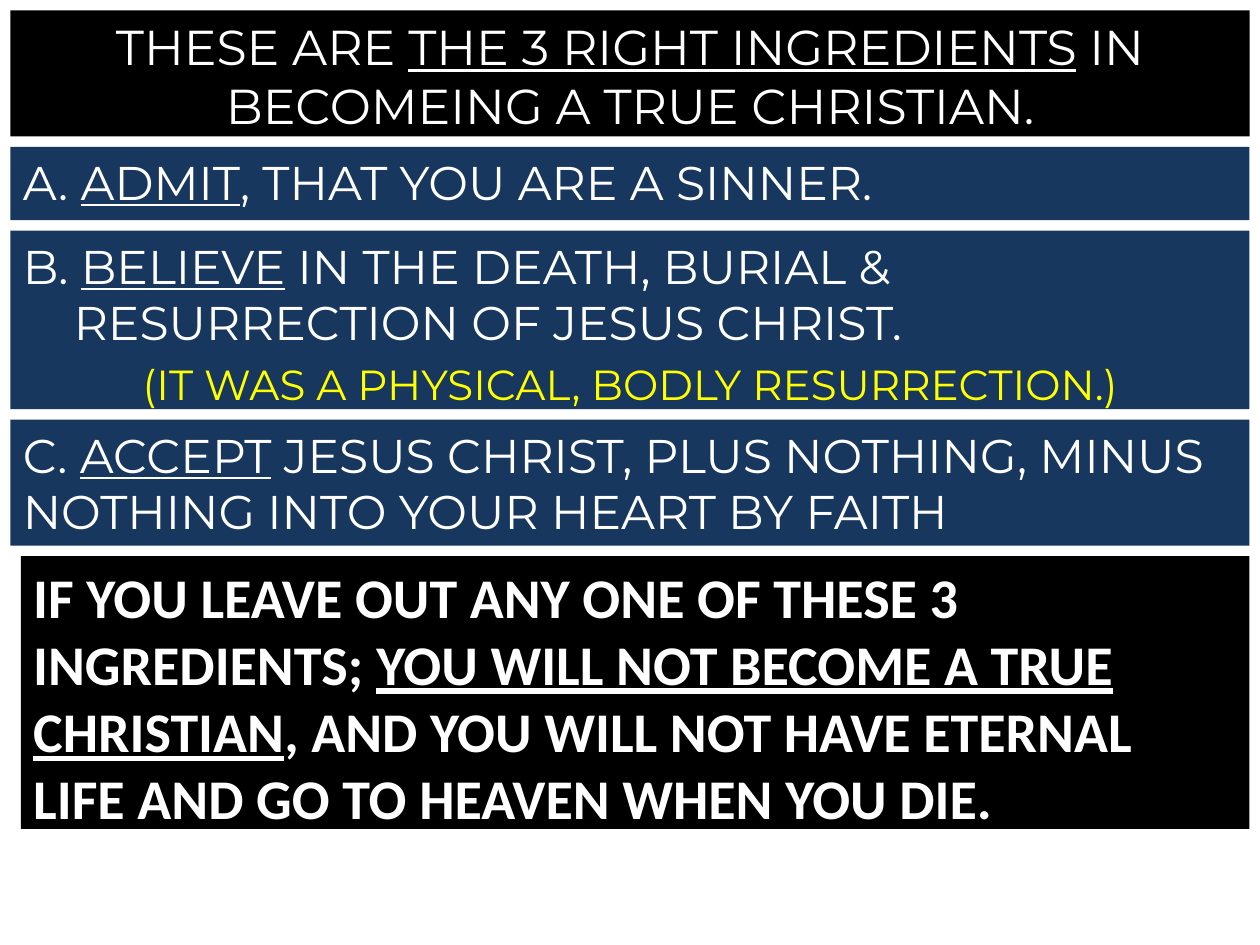
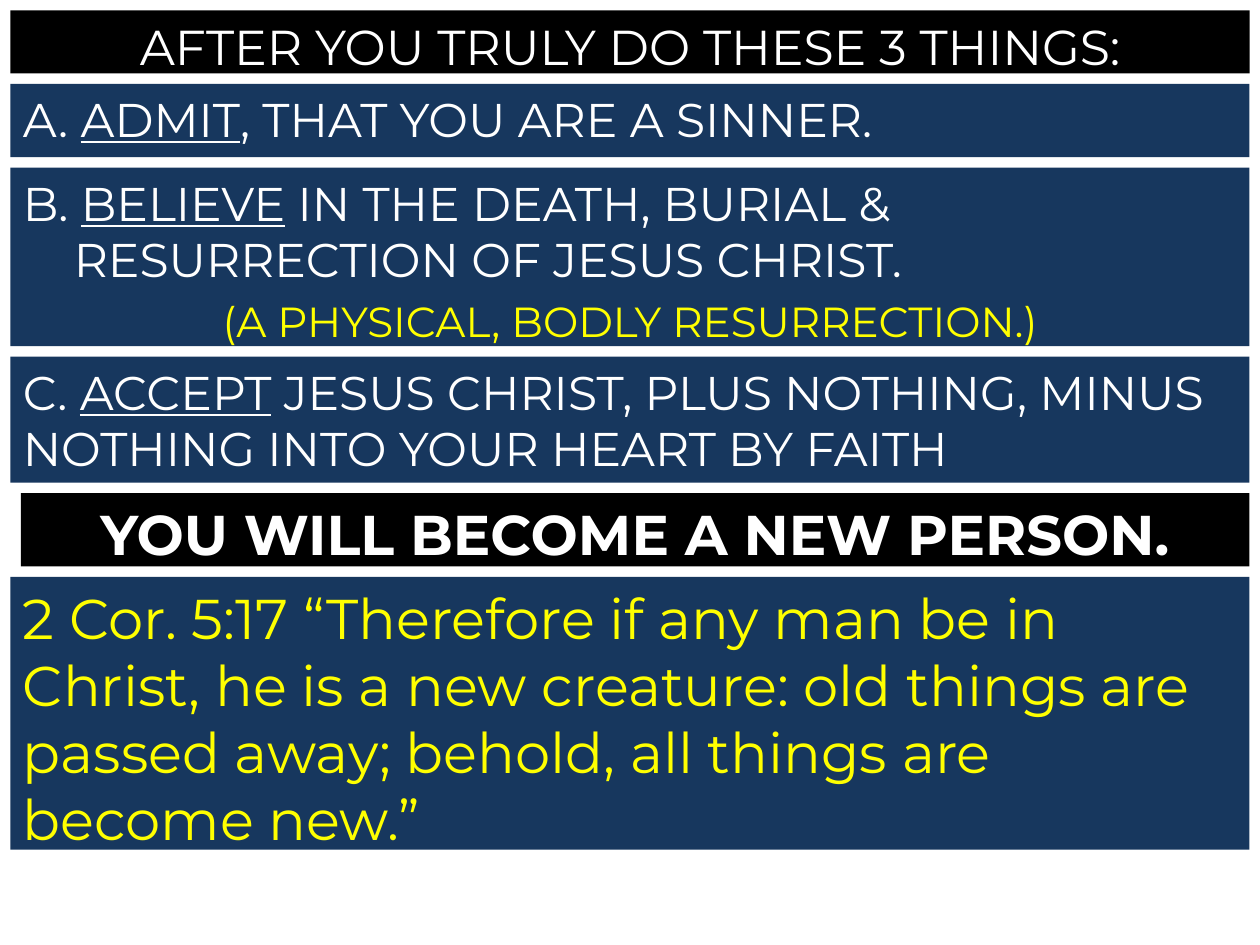
from dataclasses import dataclass

from pptx import Presentation
from pptx.dml.color import RGBColor
from pptx.enum.shapes import MSO_SHAPE
from pptx.enum.text import MSO_ANCHOR, MSO_AUTO_SIZE, PP_ALIGN
from pptx.util import Cm, Pt


@dataclass(frozen=True)
class Theme:
    navy: RGBColor = RGBColor(0x17, 0x37, 0x5E)
    black: RGBColor = RGBColor(0, 0, 0)
    white: RGBColor = RGBColor(255, 255, 255)
    yellow: RGBColor = RGBColor(255, 255, 0)
    font: str = "Montserrat"
    warning_font: str = "Calibri"
    title: float = 28
    point: float = 27
    note: float = 24
    closing: float = 32


THEME = Theme()
WIDTH, HEIGHT = 25.4, 19.05
GAP = 0.21
ONE_LINE, TWO_LINES, THREE_LINES, FOUR_LINES = 1.48, 2.54, 3.6, 5.5
HANG = 1.03


def set_all(target, values):
    for name, value in values.items():
        setattr(target, name, value)


class Deck:
    def __init__(self, theme):
        self.theme = theme
        self.prs = Presentation()
        set_all(self.prs, {"slide_width": Cm(WIDTH), "slide_height": Cm(HEIGHT)})

    def new_slide(self, title, height):
        self.s = self.prs.slides.add_slide(self.prs.slide_layouts[5])
        self.top = GAP
        sp = self.s.shapes.title
        self.place(sp, height, self.theme.black)
        self.add_text(sp.text_frame.paragraphs[0], title, self.theme.title,
                      align=PP_ALIGN.CENTER)

    def place(self, sp, height, color, left=GAP):
        set_all(sp, {"left": Cm(left), "top": Cm(self.top),
                     "width": Cm(WIDTH - GAP - left), "height": Cm(height)})
        sp.fill.solid()
        sp.fill.fore_color.rgb = color
        sp.line.fill.background()
        set_all(sp.text_frame, {"word_wrap": True, "auto_size": MSO_AUTO_SIZE.NONE,
                                "vertical_anchor": MSO_ANCHOR.TOP})
        self.top += height + GAP

    def add_text(self, p, text, size, color=None, font=None, bold=False,
                 align=PP_ALIGN.LEFT, before=0):
        set_all(p, {"alignment": align, "space_before": Pt(before)})
        for i, part in enumerate(text.split("_")):
            if part:
                r = p.add_run()
                r.text = part
                set_all(r.font, {"name": font or self.theme.font, "size": Pt(size),
                                 "bold": bold, "underline": i % 2 == 1})
                r.font.color.rgb = color or self.theme.white

    def band(self, text, height, size, fill, left=GAP, **style):
        sp = self.s.shapes.add_shape(MSO_SHAPE.RECTANGLE, 0, 0, Cm(1), Cm(1))
        sp.shadow.inherit = False
        self.place(sp, height, fill, left)
        self.add_text(sp.text_frame.paragraphs[0], text, size, **style)
        return sp

    def point(self, text, height, note=None):
        sp = self.band(text, height, self.theme.point, self.theme.navy)
        if note:
            tf = sp.text_frame
            pPr = tf.paragraphs[0]._p.get_or_add_pPr()
            pPr.set("marL", str(Cm(HANG)))
            pPr.set("indent", str(-Cm(HANG)))
            self.add_text(tf.add_paragraph(), note, self.theme.note, self.theme.yellow,
                          align=PP_ALIGN.CENTER, before=4.8)

    def three_points(self, note):
        self.point("A. _ADMIT_, THAT YOU ARE A SINNER.", ONE_LINE)
        self.point("B. _BELIEVE_ IN THE DEATH, BURIAL & RESURRECTION OF JESUS CHRIST.",
                   THREE_LINES, note)
        self.point("C. _ACCEPT_ JESUS CHRIST, PLUS NOTHING, MINUS NOTHING "
                   "INTO YOUR HEART BY FAITH", TWO_LINES)

    def closing(self, text, height, **style):
        self.band(text, height, self.theme.closing, self.theme.black,
                  left=2 * GAP, bold=True, **style)

    def verse(self, text, height):
        self.band(text, height, self.theme.closing, self.theme.navy, color=self.theme.yellow)


def main():
    deck = Deck(THEME)

    deck.new_slide("THESE ARE _THE 3 RIGHT INGREDIENTS_ IN BECOMEING A TRUE CHRISTIAN.",
                   TWO_LINES)
    deck.three_points("(IT WAS A PHYSICAL, BODLY RESURRECTION.)")
    deck.closing("IF YOU LEAVE OUT ANY ONE OF THESE 3 INGREDIENTS; "
                 "_YOU WILL NOT BECOME A TRUE CHRISTIAN_, AND YOU WILL NOT HAVE "
                 "ETERNAL LIFE AND GO TO HEAVEN WHEN YOU DIE.",
                 FOUR_LINES, font=THEME.warning_font)

    deck.new_slide("AFTER YOU TRULY DO THESE 3 THINGS:", 1.27)
    deck.three_points("(A PHYSICAL, BODLY RESURRECTION.)")
    deck.closing("YOU WILL BECOME A NEW PERSON.", ONE_LINE, align=PP_ALIGN.CENTER)
    deck.verse("2 Cor. 5:17 “Therefore if any man be in Christ, he is a new creature: "
               "old things are passed away; behold, all things are become new.”", FOUR_LINES)

    deck.prs.save("out.pptx")


if __name__ == "__main__":
    main()
